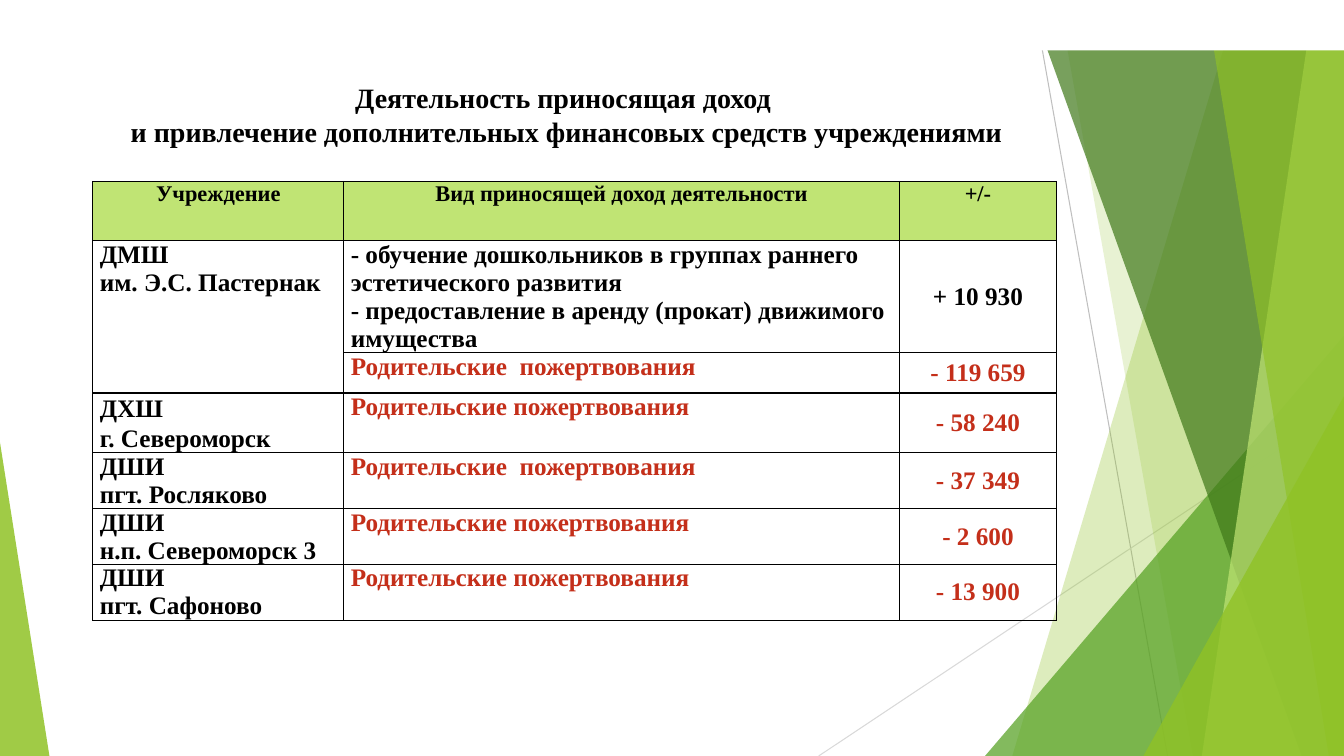
from lxml import etree
from pptx import Presentation
from pptx.dml.color import RGBColor
from pptx.enum.shapes import MSO_CONNECTOR, MSO_SHAPE
from pptx.enum.text import MSO_ANCHOR, MSO_AUTO_SIZE, PP_ALIGN
from pptx.oxml.ns import qn
from pptx.util import Inches, Pt

W, H = 13.33, 7.5
FONT = "Times New Roman"
BLACK, RED, LIME, GREEN, WHITE = "000000", "C42F1A", "C0E474", "90C226", "FFFFFF"
CENTER, JUSTIFY, LEFT = PP_ALIGN.CENTER, PP_ALIGN.JUSTIFY, PP_ALIGN.LEFT
TOP, MIDDLE = MSO_ANCHOR.TOP, MSO_ANCHOR.MIDDLE
TRIANGLE, RECTANGLE = MSO_SHAPE.ISOSCELES_TRIANGLE, MSO_SHAPE.RECTANGLE


def rgb(color):
    return RGBColor.from_string(color)


def write(tf, text, size=18, color=BLACK, align=JUSTIFY, spacing=None):
    for i, line in enumerate(text.split("\n")):
        p = tf.add_paragraph() if i else tf.paragraphs[0]
        p.alignment = align
        if spacing:
            p.line_spacing = spacing
        r = p.add_run()
        r.text = line
        r.font.name, r.font.size, r.font.bold = FONT, Pt(size), True
        r.font.color.rgb = rgb(color)


prs = Presentation()
prs.slide_width, prs.slide_height = Inches(W), Inches(H)
s = prs.slides.add_slide(prs.slide_layouts[5])

# Thin crossing lines
for x1, y1, x2, color in [(10.25, 0, 11.58, "BFBFBF"), (W, 4.03, 8.12, "D9D9D9")]:
    c = s.shapes.add_connector(MSO_CONNECTOR.STRAIGHT, Inches(x1), Inches(y1),
                               Inches(x2), Inches(H))
    c.line.color.rgb = rgb(color)
    c.line.width = Pt(0.75)
    etree.SubElement(c._element.spPr, qn("a:effectLst"))

# Panels run from the top edge to the bottom edge at the right side;
# triangles stand on the bottom edge, with the apex at the given share
facets = [
    ("panel", 12.28, 10.04, GREEN, 30),
    ("panel", 10.5, 11.83, GREEN, 20),
    ("triangle", (9.77, 3.33, W - 9.77), 1, "54A021", 72),
    ("panel", 10.21, 12.91, "3F7819", 70),
    ("panel", 13.03, 11.92, LIME, 70),
    ("panel", 11.96, 13.18, GREEN, 65),
    ("triangle", (11.34, 3.93, W - 11.34), 1, GREEN, 80),
    ("triangle", (0, 4.39, 0.49), 0, GREEN, 85),
]
for kind, start, end, color, opacity in facets:
    if kind == "panel":
        fb = s.shapes.build_freeform(Inches(start), 0)
        fb.add_line_segments([(Inches(x), Inches(y)) for x, y in
                              [(W, 0), (W, H), (end, H)]])
        sp = fb.convert_to_shape()
    else:
        x, y, w = start
        sp = s.shapes.add_shape(TRIANGLE, Inches(x), Inches(y), Inches(w), Inches(H - y))
        sp.adjustments[0] = end
    sp.shadow.inherit = False
    sp.line.fill.background()
    sp.fill.solid()
    sp.fill.fore_color.rgb = rgb(color)
    clr = sp._element.spPr.find(qn("a:solidFill")).find(qn("a:srgbClr"))
    etree.SubElement(clr, qn("a:alpha"), val=str(opacity * 1000))

# Table
DONATIONS = "Родительские пожертвования"
DONATIONS_WIDE = "Родительские  пожертвования"
rows = [
    ("Учреждение", "Вид приносящей доход деятельности", "+/-"),
    ("ДМШ \nим. Э.С. Пастернак",
     "- обучение дошкольников в группах раннего эстетического развития\n"
     "- предоставление в аренду (прокат) движимого имущества", "+ 10 930"),
    ("", DONATIONS_WIDE, "- 119 659"),
    ("ДХШ  \nг. Североморск", DONATIONS, "- 58 240"),
    ("ДШИ \nпгт. Росляково", DONATIONS_WIDE, "- 37 349"),
    ("ДШИ \nн.п. Североморск 3", DONATIONS, "- 2 600"),
    ("ДШИ \nпгт. Сафоново", DONATIONS, "- 13 900"),
]
widths = [2.49, 5.51, 1.56]
heights = [0.59, 1.11, 0.4, 0.59, 0.55, 0.55, 0.55]
table = s.shapes.add_table(len(rows), len(widths), Inches(0.92), Inches(1.8),
                           Inches(sum(widths)), Inches(sum(heights))).table
for col, width in zip(table.columns, widths):
    col.width = Inches(width)
for row, height in zip(table.rows, heights):
    row.height = Inches(height)
table.cell(1, 0).merge(table.cell(2, 0))

for i, texts in enumerate(rows):
    for j, text in enumerate(texts):
        cell = table.cell(i, j)
        cell.margin_left = cell.margin_right = Inches(0.07)
        cell.margin_top = cell.margin_bottom = 0
        cell.vertical_anchor = MIDDLE if i and j == 2 else TOP
        if i == 0:
            cell.fill.solid()
            cell.fill.fore_color.rgb = rgb(LIME)
        else:
            cell.fill.background()
        if text:
            write(cell.text_frame, text,
                  size=18 if i else 16,
                  color=RED if i > 1 and j else BLACK,
                  align=CENTER if i == 0 or j == 2 else LEFT if (i, j) == (1, 1) else JUSTIFY,
                  spacing=1.07 if (i, j) == (3, 0) else None)
        # Borders come before the fill in the cell properties
        tcPr = cell._tc.get_or_add_tcPr()
        for k, side in enumerate(["a:lnL", "a:lnR", "a:lnT", "a:lnB"]):
            ln = etree.Element(qn(side), w=str(Pt(1)))
            fill = etree.SubElement(ln, qn("a:solidFill"))
            etree.SubElement(fill, qn("a:srgbClr"), val=BLACK)
            tcPr.insert(k, ln)

# White band along the top
band = s.shapes.add_shape(RECTANGLE, 0, 0, Inches(W), Inches(0.5))
band.shadow.inherit = False
band.line.fill.background()
band.fill.solid()
band.fill.fore_color.rgb = rgb(WHITE)

# Title
title = s.shapes.title
title.left, title.top = Inches(0.9), Inches(0.75)
title.width, title.height = Inches(9.44), Inches(0.77)
tf = title.text_frame
tf.word_wrap = True
tf.auto_size = MSO_AUTO_SIZE.NONE
tf.vertical_anchor = TOP
write(tf, "Деятельность приносящая доход \n"
          "и привлечение дополнительных финансовых средств учреждениями",
      size=20, align=CENTER)

prs.save("out.pptx")
